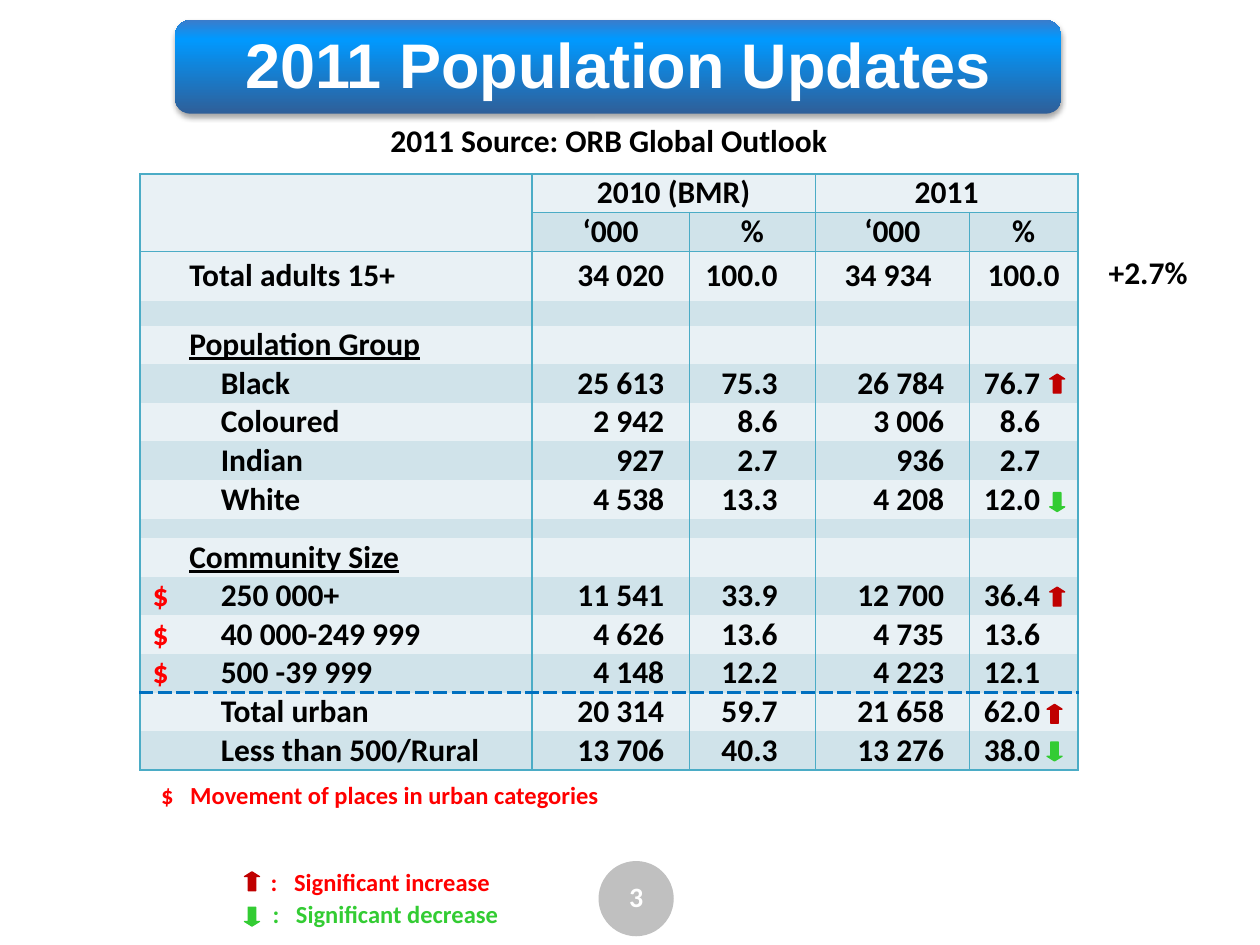
from lxml import etree
from pptx import Presentation
from pptx.dml.color import RGBColor
from pptx.enum.shapes import MSO_SHAPE as Shape
from pptx.enum.text import MSO_ANCHOR as Anchor, PP_ALIGN as Align
from pptx.oxml import parse_xml
from pptx.oxml.ns import nsdecls, qn
from pptx.util import Pt

BLACK = RGBColor(0x00, 0x00, 0x00)
WHITE = RGBColor(0xFF, 0xFF, 0xFF)
RED = RGBColor(0xFF, 0x00, 0x00)
DARK_RED = RGBColor(0xC0, 0x00, 0x00)
GREEN = RGBColor(0x33, 0xCC, 0x33)
GRAY = RGBColor(0xC0, 0xC0, 0xC0)
TEAL = RGBColor(0x4B, 0xAC, 0xC6)
BLUE = RGBColor(0x00, 0x70, 0xC0)
BANDS = [RGBColor(0xE9, 0xF1, 0xF5), RGBColor(0xD0, 0xE3, 0xEA)]


def write(frame, text, size=18, color=BLACK, align=Align.LEFT, font="Calibri",
          underline=None, tab=None):
    para = frame.paragraphs[0]
    para.alignment = align
    if tab:
        stops = etree.SubElement(para._p.get_or_add_pPr(), qn("a:tabLst"))
        etree.SubElement(stops, qn("a:tab"), pos=str(Pt(tab)), algn="l")
    span = para.add_run()
    span.text = text
    span.font.name = font
    span.font.size = Pt(size)
    span.font.bold = True
    span.font.underline = underline
    span.font.color.rgb = color
    return para


def add_edge(cell, side, color=TEAL, width=1, dash="solid"):
    line = etree.SubElement(cell._tc.get_or_add_tcPr(), qn("a:ln" + side), w=str(Pt(width)))
    if color is None:
        etree.SubElement(line, qn("a:noFill"))
        return
    fill = etree.SubElement(line, qn("a:solidFill"))
    etree.SubElement(fill, qn("a:srgbClr"), val=str(color))
    etree.SubElement(line, qn("a:prstDash"), val=dash)


deck = Presentation()
deck.slide_width, deck.slide_height = Pt(720), Pt(540)
page = deck.slides.add_slide(deck.slide_layouts[5])
shapes = page.shapes

title = shapes.title
bar = shapes.add_shape(Shape.ROUNDED_RECTANGLE, 0, 0, 0, 0)
for part in (bar, title):
    part.left, part.top, part.width, part.height = Pt(100), Pt(11.5), Pt(506.5), Pt(53.5)
bar.line.fill.background()
title._element.addprevious(bar._element)
bar_properties = bar._element.spPr
bar_properties.find(qn("a:ln")).addprevious(parse_xml(
    f'<a:gradFill {nsdecls("a")} rotWithShape="1"><a:gsLst>'
    '<a:gs pos="0"><a:srgbClr val="2F5F99"/></a:gs>'
    '<a:gs pos="80000"><a:srgbClr val="0099FF"/></a:gs>'
    '<a:gs pos="100000"><a:srgbClr val="3A7CCB"/></a:gs>'
    '</a:gsLst><a:lin ang="16200000" scaled="0"/></a:gradFill>'))
bar_properties.append(parse_xml(
    f'<a:effectLst {nsdecls("a")}>'
    '<a:outerShdw blurRad="39370" dist="22860" dir="5400000" rotWithShape="0">'
    '<a:srgbClr val="000000"><a:alpha val="35000"/></a:srgbClr></a:outerShdw></a:effectLst>'))
title.text_frame.vertical_anchor = Anchor.MIDDLE
heading = write(title.text_frame, "2011 Population Updates", size=36, color=WHITE,
                align=Align.CENTER, font="Arial")
heading.line_spacing = 0.95

rows = [
    ["", "", "2010 (BMR)", "", "2011", ""],
    ["", "", "‘000", "%", "‘000", "%"],
    ["", "Total adults 15+", "34 020", "100.0", "34 934", "100.0"],
    [""] * 6,
    ["", "Population Group", "", "", "", ""],
    ["", "\tBlack", "25 613", "75.3", "26 784", "76.7"],
    ["", "\tColoured", "2 942", "8.6", "3 006", "8.6"],
    ["", "\tIndian", "927", "2.7", "936", "2.7"],
    ["", "\tWhite", "4 538", "13.3", "4 208", "12.0"],
    [""] * 6,
    ["", "Community Size", "", "", "", ""],
    ["$", "\t250 000+", "11 541", "33.9", "12 700", "36.4"],
    ["$", "\t40 000-249 999", "4 626", "13.6", "4 735", "13.6"],
    ["$", "\t500 -39 999", "4 148", "12.2", "4 223", "12.1"],
    ["", "\tTotal urban", "20 314", "59.7", "21 658", "62.0"],
    ["", "\tLess than 500/Rural", "13 706", "40.3", "13 276", "38.0"],
]
widths = [21, 203, 90, 72, 88, 62]
special_heights = {2: 28.5, 3: 14, 9: 11}
right_insets = [7.2, 7.2, 14.4, 21.6, 14.4, 21.6]
TOTAL_ROW, URBAN_ROW = 2, 14

frame = shapes.add_table(len(rows), len(widths), Pt(80), Pt(99.4), Pt(536), Pt(341))
table = frame.table
table.first_row = table.horz_banding = False
table._tbl.tblPr.find(qn("a:tableStyleId")).text = "{2D5ABB26-0587-4C30-8999-92F81FD0307C}"
for column, width in zip(table.columns, widths):
    column.width = Pt(width)
table.cell(0, 0).merge(table.cell(1, 1))
table.cell(0, 2).merge(table.cell(0, 3))
table.cell(0, 4).merge(table.cell(0, 5))

for r, texts in enumerate(rows):
    table.rows[r].height = Pt(special_heights.get(r, 22.1))
    for c, text in enumerate(texts):
        cell = table.cell(r, c)
        header = r < TOTAL_ROW
        add_edge(cell, "L", TEAL if header or c != 1 else None)
        add_edge(cell, "R", TEAL if header or c != 0 else None)
        for side, boundary in (("T", r), ("B", r + 1)):
            if boundary == URBAN_ROW:
                add_edge(cell, side, BLUE, 1.5, "sysDash")
            else:
                solid = boundary <= TOTAL_ROW or boundary == len(rows)
                add_edge(cell, side, TEAL if solid else None)
        cell.fill.solid()
        cell.fill.fore_color.rgb = BANDS[r % 2]
        cell.margin_top = cell.margin_bottom = 0
        cell.margin_left = Pt(7.2)
        cell.margin_right = Pt(7.2 if header else right_insets[c])
        align = Align.LEFT if c < 2 else Align.CENTER if header else Align.RIGHT
        if r == TOTAL_ROW:
            cell.vertical_anchor = Anchor.MIDDLE
            if c == 4:
                cell.margin_right = Pt(21.6)
            elif c == 5:
                cell.margin_right = Pt(7.2)
                align = Align.CENTER
        if text:
            write(cell.text_frame, text, color=RED if text == "$" else BLACK, align=align,
                  underline=True if text in ("Population Group", "Community Size") else None,
                  tab=18 if text.startswith("\t") else None)
        else:
            size = "800" if r in special_heights else "1800"
            etree.SubElement(cell.text_frame.paragraphs[0]._p, qn("a:endParaRPr"), sz=size)

circle = shapes.add_shape(Shape.OVAL, Pt(342), Pt(492), Pt(43), Pt(43))
circle.shadow.inherit = False
circle.fill.solid()
circle.fill.fore_color.rgb = GRAY
circle.line.fill.background()

for text, left, top, width, height, style in [
    ("3", 342, 499, 43, 27, dict(size=16, color=WHITE, align=Align.CENTER)),
    ("$   Movement of places in urban categories", 85, 442, 366, 24, dict(size=14, color=RED)),
    ("+2.7%", 626.4, 141, 60, 29, {}),
    ("2011 Source: ORB Global Outlook", 216, 65.5, 280, 29, {}),
    (":   Significant increase", 147.6, 492, 164, 24, dict(size=14, color=RED)),
    (" :   Significant decrease", 145.5, 510, 179, 24, dict(size=14, color=GREEN)),
]:
    box = shapes.add_textbox(Pt(left), Pt(top), Pt(width), Pt(height))
    box.text_frame.word_wrap = text != "+2.7%"
    write(box.text_frame, text, **style)

for kind, color, tip, places in [
    (Shape.UP_ARROW, DARK_RED, 0.32, [(599.8, 213.8), (599.8, 335.5), (598.3, 402.5), (139.7, 498.2)]),
    (Shape.DOWN_ARROW, GREEN, 0.31, [(599.8, 281.5), (598.3, 424), (139.7, 518.4)]),
]:
    for left, top in places:
        arrow = shapes.add_shape(kind, Pt(left), Pt(top), Pt(8.6), Pt(10.8))
        arrow.shadow.inherit = False
        arrow.adjustments[1] = tip
        arrow.fill.solid()
        arrow.fill.fore_color.rgb = color
        arrow.line.color.rgb = color
        arrow.line.width = Pt(0.75)

deck.save("out.pptx")
